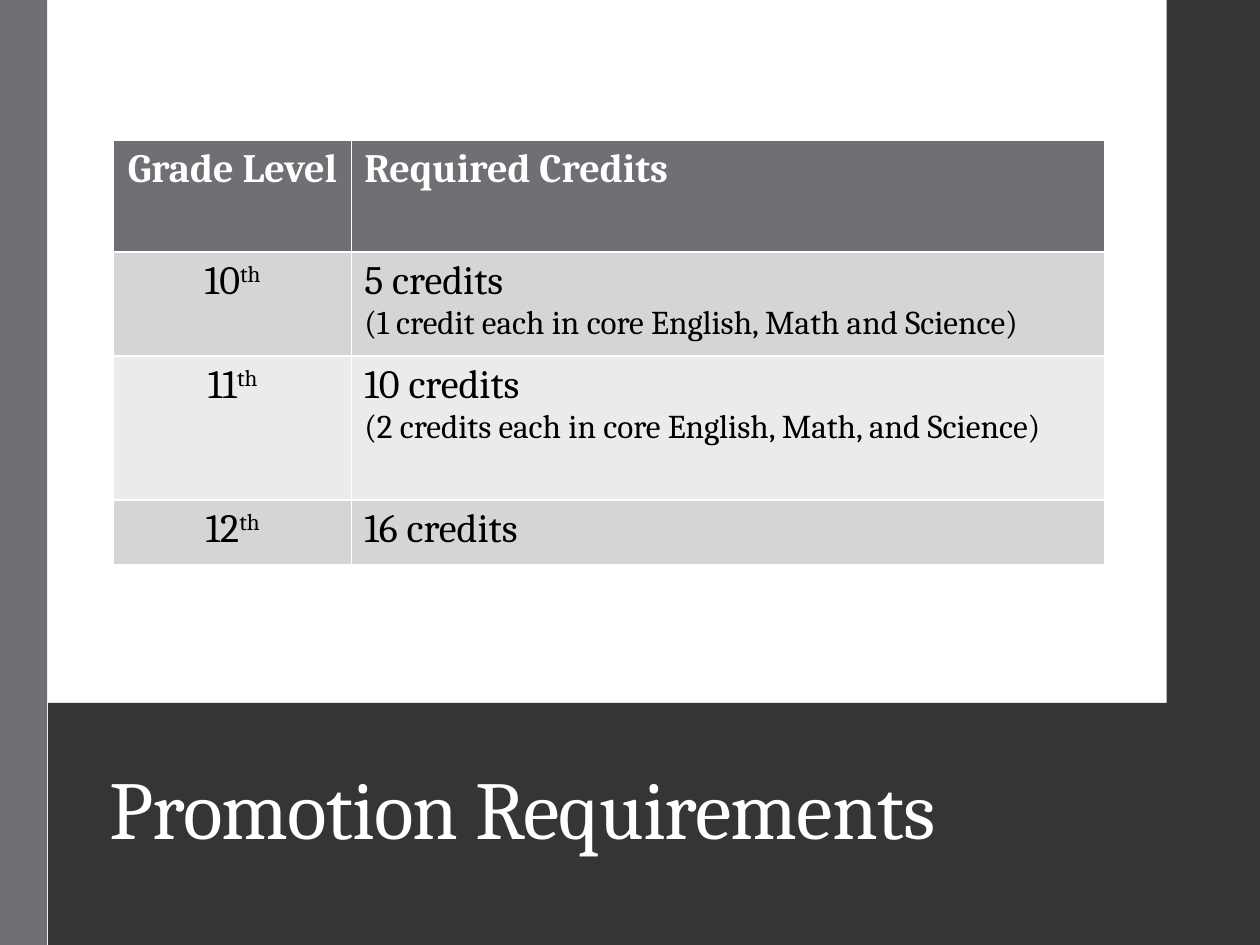
from pptx import Presentation
from pptx.dml.color import RGBColor
from pptx.enum.shapes import MSO_SHAPE
from pptx.enum.text import MSO_ANCHOR, MSO_AUTO_SIZE, PP_ALIGN
from pptx.util import Cm, Pt

RECTANGLE = MSO_SHAPE.RECTANGLE
BOTTOM = MSO_ANCHOR.BOTTOM
NO_AUTOFIT = MSO_AUTO_SIZE.NONE
LEFT = PP_ALIGN.LEFT
CENTER = PP_ALIGN.CENTER

WHITE = RGBColor(0xFF, 0xFF, 0xFF)
BLACK = RGBColor(0x00, 0x00, 0x00)
CHARCOAL = RGBColor(0x35, 0x35, 0x37)
GRAY = RGBColor(0x6F, 0x6F, 0x74)
DARK_BAND = RGBColor(0xD5, 0xD5, 0xD6)
LIGHT_BAND = RGBColor(0xEB, 0xEB, 0xEB)

FONT = "Cambria"
TITLE_SIZE = 47
MAIN_SIZE = 23
DETAIL_SIZE = 19

PANELS = [
    (0.97, 0, 22.58, 14.17, WHITE),
    (0.97, 14.17, 22.58, 4.88, CHARCOAL),
    (0, 0, 0.95, 19.05, GRAY),
    (23.52, 0, 1.88, 19.05, CHARCOAL),
]
HEADINGS = ["Grade Level", "Required Credits"]
REQUIREMENTS = [
    ("10", ["5 credits", "(1 credit each in core English, Math and Science)"]),
    ("11", ["10 credits", "(2 credits each in core English, Math, and Science)"]),
    ("12", ["16 credits"]),
]
COLUMN_WIDTHS = [4.8, 15.19]
ROW_HEIGHTS = [2.26, 2.1, 2.9, 1.3]


def format_run(run, size, color, bold=False):
    run.font.name = FONT
    run.font.size = Pt(size)
    run.font.color.rgb = color
    run.font.bold = bold


def add_panel(slide, left, top, width, height, color):
    panel = slide.shapes.add_shape(
        RECTANGLE, Cm(left), Cm(top), Cm(width), Cm(height))
    panel.shadow.inherit = False
    panel.fill.solid()
    panel.fill.fore_color.rgb = color
    panel.line.fill.background()


def format_title(slide, text):
    title = slide.shapes.title
    title.left, title.top = Cm(1.96), Cm(14.4)
    title.width, title.height = Cm(21.16), Cm(3)
    text_frame = title.text_frame
    text_frame.text = text
    text_frame.word_wrap = True
    text_frame.auto_size = NO_AUTOFIT
    text_frame.vertical_anchor = BOTTOM
    paragraph = text_frame.paragraphs[0]
    paragraph.alignment = LEFT
    paragraph.line_spacing = 0.85
    run = paragraph.runs[0]
    format_run(run, TITLE_SIZE, WHITE)
    run.font._element.set("spc", "-50")
    title.element.getparent().append(title.element)


def fill_cell(cell, lines, fill, color, alignment=LEFT, bold=False):
    cell.fill.solid()
    cell.fill.fore_color.rgb = fill
    cell.text_frame.text = "\n".join(lines)
    for index, paragraph in enumerate(cell.text_frame.paragraphs):
        paragraph.alignment = alignment
        size = DETAIL_SIZE if index else MAIN_SIZE
        format_run(paragraph.runs[0], size, color, bold)


def add_ordinal_suffix(cell):
    run = cell.text_frame.paragraphs[0].add_run()
    run.text = "th"
    format_run(run, MAIN_SIZE, BLACK)
    run.font._element.set("baseline", "30000")


def add_credit_table(slide):
    table = slide.shapes.add_table(
        len(ROW_HEIGHTS), len(COLUMN_WIDTHS), Cm(2.29), Cm(2.82),
        Cm(sum(COLUMN_WIDTHS)), Cm(sum(ROW_HEIGHTS))).table
    for column, width in zip(table.columns, COLUMN_WIDTHS):
        column.width = Cm(width)
    for row, height in zip(table.rows, ROW_HEIGHTS):
        row.height = Cm(height)
    for index, (heading, alignment) in enumerate(zip(HEADINGS, [CENTER, LEFT])):
        fill_cell(table.cell(0, index), [heading], GRAY, WHITE, alignment, True)
    for row_index, (grade, credit_lines) in enumerate(REQUIREMENTS, start=1):
        band = DARK_BAND if row_index % 2 else LIGHT_BAND
        grade_cell = table.cell(row_index, 0)
        fill_cell(grade_cell, [grade], band, BLACK, CENTER)
        add_ordinal_suffix(grade_cell)
        fill_cell(table.cell(row_index, 1), credit_lines, band, BLACK)


def main():
    presentation = Presentation()
    presentation.slide_width = Cm(25.4)
    presentation.slide_height = Cm(19.05)
    slide = presentation.slides.add_slide(presentation.slide_layouts[5])
    for panel in PANELS:
        add_panel(slide, *panel)
    format_title(slide, "Promotion Requirements")
    add_credit_table(slide)
    presentation.save("out.pptx")


if __name__ == "__main__":
    main()
